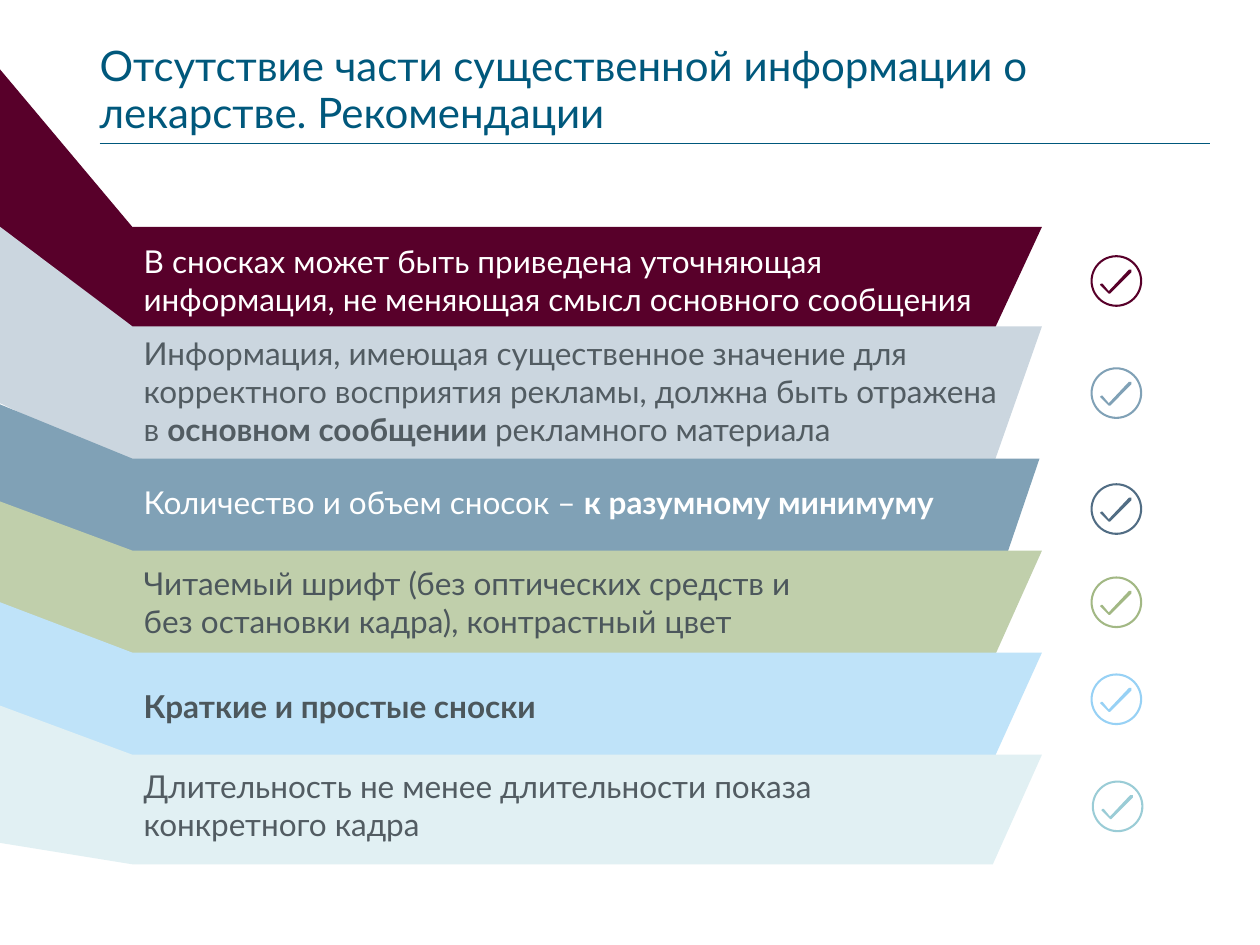
from lxml.etree import SubElement
from pptx import Presentation
from pptx.dml.color import RGBColor
from pptx.enum.shapes import MSO_CONNECTOR as CONNECTOR, MSO_SHAPE as SHAPE
from pptx.enum.text import MSO_ANCHOR as ANCHOR, MSO_AUTO_SIZE as AUTOSIZE, PP_ALIGN as ALIGN
from pptx.oxml.ns import qn
from pptx.util import Inches, Pt

FONT = "Lato"
COLORS = {
    "teal": "00587C", "white": "FFFFFF", "gray": "525C62", "slate": "4C575C",
    "wine": "58002A", "silver": "CBD6DF", "steel": "80A1B6", "navy": "516D84",
    "sage": "C0CFAB", "olive": "A2B884", "sky": "BFE3F9", "azure": "97D1F5",
    "mist": "E1F0F3", "aqua": "9ACCD6",
}
TITLE = "Отсутствие части существенной информации о лекарстве. Рекомендации"

RECOMMENDATIONS = [
    dict(runs=[("В сносках может быть приведена уточняющая информация, "
                "не меняющая смысл основного сообщения", False)],
         ink="white", fill="wine", mark="wine", band=(1.8, 2.64), edge=(0.55, 2.05),
         text=(1.92, 6.8, 0.61), check=(8.86, 2.23)),
    dict(runs=[("Информация, имеющая существенное значение для корректного "
                "восприятия рекламы, должна быть отражена в ", False),
               ("основном сообщении ", True), ("рекламного материала", False)],
         ink="gray", fill="silver", mark="steel", band=(2.59, 3.7), edge=(1.8, 3.2),
         text=(2.65, 6.81, 0.91), check=(8.86, 3.12)),
    dict(runs=[("Количество и объем сносок – ", False), ("к разумному минимуму", True)],
         ink="white", fill="steel", mark="navy", band=(3.64, 4.58), edge=(3.21, 4.4),
         text=(3.83, 7.21, 0.3), check=(8.86, 4.04), shift=-0.02),
    dict(runs=[("Читаемый шрифт (без оптических средств и \v"
                "без остановки кадра), контрастный цвет", False)],
         ink="slate", fill="sage", mark="olive", band=(4.37, 5.24), edge=(3.98, 5.07),
         text=(4.48, 6.81, 0.61), check=(8.86, 4.78)),
    dict(runs=[("Краткие и простые сноски", True)],
         ink="slate", fill="sky", mark="azure", band=(5.18, 6.04), edge=(4.78, 5.87),
         text=(5.45, 6.81, 0.3), check=(8.86, 5.55)),
    dict(runs=[("Длительность не менее длительности показа \vконкретного кадра", False)],
         ink="gray", fill="mist", mark="aqua", band=(5.99, 6.86), edge=(5.6, 6.69),
         text=(6.09, 6.81, 0.61), check=(8.87, 6.4)),
]
FOLD, HEEL, TIP = 1.05, 7.88, 8.27
RING = 0.41
TICK = [(0.12, -0.09), (0.1, -0.09), (-0.06, 0.08), (-0.11, 0.02), (-0.12, 0.02),
        (-0.13, 0.03), (-0.12, 0.04), (-0.06, 0.1), (-0.05, 0.1), (0.12, -0.07)]


def rgb(name):
    return RGBColor.from_string(COLORS[name])


def paint(shape, color):
    shape.shadow.inherit = False
    shape.fill.solid()
    shape.fill.fore_color.rgb = rgb(color)
    shape.line.fill.background()


def add_polygon(slide, points, color):
    start, *rest = [(Inches(x), Inches(y)) for x, y in points]
    builder = slide.shapes.build_freeform(*start)
    builder.add_line_segments(rest, close=True)
    paint(builder.convert_to_shape(), color)


def set_frame(frame):
    frame.margin_left = frame.margin_right = frame.margin_top = frame.margin_bottom = 0
    frame.word_wrap = True
    frame.auto_size = AUTOSIZE.NONE


def set_font(paragraph, size, color):
    paragraph.font.name = FONT
    paragraph.font.size = Pt(size)
    paragraph.font.color.rgb = rgb(color)


def add_title(slide):
    title = slide.shapes.title
    title.left, title.top, title.width, title.height = map(Inches, (0.79, 0.16, 8.73, 0.94))
    set_frame(title.text_frame)
    title.text_frame.vertical_anchor = ANCHOR.BOTTOM
    title.text_frame.text = TITLE
    heading = title.text_frame.paragraphs[0]
    heading.alignment = ALIGN.LEFT
    heading.line_spacing = 0.95
    set_font(heading, 24, "teal")
    rule = slide.shapes.add_connector(
        CONNECTOR.STRAIGHT, Inches(0.79), Inches(1.14), Inches(9.6), Inches(1.14))
    rule.line.color.rgb = rgb("teal")
    rule.line.width = Pt(1)
    SubElement(rule._element.spPr, qn("a:effectLst"))


def add_band(slide, item):
    (top, bottom), (edge_top, edge_bottom) = item["band"], item["edge"]
    shift = item.get("shift", 0)
    heel = HEEL + (0.07 if item["fill"] == "steel" else 0) + shift
    add_polygon(slide, [(heel, bottom), (TIP + shift, top), (FOLD, top), (0, edge_top),
                        (0, edge_bottom), (FOLD, bottom)], item["fill"])


def add_recommendation(slide, item):
    top, width, height = item["text"]
    box = slide.shapes.add_textbox(*map(Inches, (1.14, top, width, height)))
    set_frame(box.text_frame)
    paragraph = box.text_frame.paragraphs[0]
    set_font(paragraph, 18, item["ink"])
    for words, bold in item["runs"]:
        for index, line in enumerate(words.split("\v")):
            if index:
                paragraph.add_line_break()
            run = paragraph.add_run()
            run.text = line
            run.font.bold = bold


def add_check(slide, item):
    x, y = item["check"]
    ring = slide.shapes.add_shape(
        SHAPE.DONUT, *map(Inches, (x - RING / 2, y - RING / 2, RING, RING)))
    ring.adjustments[0] = 0.04
    paint(ring, item["mark"])
    add_polygon(slide, [(x + dx, y + dy) for dx, dy in TICK], item["mark"])


def main():
    deck = Presentation()
    deck.slide_width, deck.slide_height = Inches(10), Inches(7.5)
    slide = deck.slides.add_slide(deck.slide_layouts[5])
    add_title(slide)
    for add_part in (add_band, add_recommendation, add_check):
        for item in RECOMMENDATIONS:
            add_part(slide, item)
    deck.save("out.pptx")


if __name__ == "__main__":
    main()
